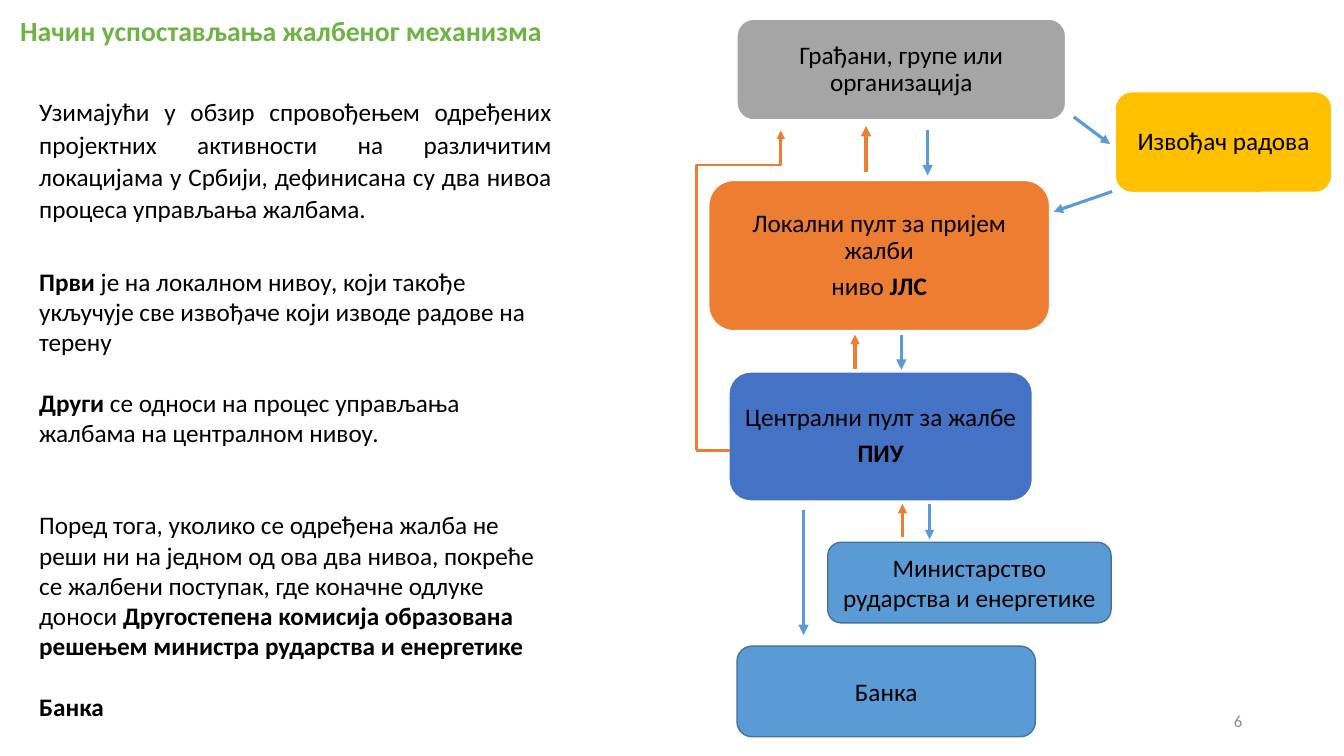
from lxml import etree
from pptx import Presentation
from pptx import util as u
from pptx.dml.color import RGBColor
from pptx.enum import shapes, text
from pptx.oxml.ns import qn

PX = 9144
FONT = "Calibri"
BLACK, WHITE = "000000", "FFFFFF"
BLUE, ORANGE, OUTLINE = "5B9BD5", "ED7D31", "43739E"
MIDDLE = text.MSO_ANCHOR.MIDDLE
CENTER, RIGHT, JUSTIFY = text.PP_ALIGN.CENTER, text.PP_ALIGN.RIGHT, text.PP_ALIGN.JUSTIFY


def px(*lengths):
    return [u.Emu(length * PX) for length in lengths]


def paint(color_format, color):
    color_format.rgb = RGBColor.from_string(color)


def set_insets(frame, left, top, right, bottom):
    frame.margin_left, frame.margin_top, frame.margin_right, frame.margin_bottom = px(
        left, top, right, bottom)


def write(paragraph, runs, size=18, color=BLACK, align=None, spacing=None, before=0, after=0):
    font = paragraph.font
    font.name, font.size = FONT, u.Pt(size)
    paint(font.color, color)
    if align is not None:
        paragraph.alignment = align
    if spacing:
        paragraph.line_spacing = spacing
    paragraph.space_before, paragraph.space_after = u.Pt(before), u.Pt(after)
    for words, bold in runs:
        run = paragraph.add_run()
        run.text = words
        if bold:
            run.font.bold = True


def next_paragraph(frame, index):
    return frame.add_paragraph() if index else frame.paragraphs[0]


def add_text(slide, place, anchor=text.MSO_ANCHOR.TOP):
    frame = slide.shapes.add_textbox(*px(*place)).text_frame
    frame.word_wrap = True
    frame.vertical_anchor = anchor
    return frame


def add_level(slide, place, fill, outline, paragraphs, inset, spacing, after):
    level = slide.shapes.add_shape(shapes.MSO_SHAPE.ROUNDED_RECTANGLE, *px(*place))
    level.shadow.inherit = False
    level.fill.solid()
    paint(level.fill.fore_color, fill)
    paint(level.line.color, outline)
    level.line.width = u.Pt(1)
    frame = level.text_frame
    frame.word_wrap = True
    frame.vertical_anchor = MIDDLE
    set_insets(frame, inset, 5, inset, 5)
    for index, runs in enumerate(paragraphs):
        write(next_paragraph(frame, index), runs, align=CENTER, spacing=spacing, after=after)


def add_link(slide, ends, color, width, arrow=True, kind=shapes.MSO_CONNECTOR.STRAIGHT):
    link = slide.shapes.add_connector(kind, *px(*ends))
    paint(link.line.color, color)
    link.line.width = u.Pt(width)
    properties = link._element.spPr
    if arrow:
        etree.SubElement(properties.find(qn("a:ln")), qn("a:tailEnd"), type="triangle")
    etree.SubElement(properties, qn("a:effectLst"))
    return link


def add_return_path(slide):
    route = add_link(slide, (891, 330, 574, 246), ORANGE, 2, kind=shapes.MSO_CONNECTOR.ELBOW)
    properties = route._element.spPr
    properties.find(qn("a:xfrm")).set("rot", "5400000")
    guides = properties.find(qn("a:prstGeom")).find(qn("a:avLst"))
    etree.SubElement(guides, qn("a:gd"), name="adj1", fmla="val 89200")


def add_title(slide):
    frame = add_text(slide, (0, 7, 1333, 72), MIDDLE)
    set_insets(frame, 20, 0, 10, 22)
    write(frame.paragraphs[0], [("Начин успостављања жалбеног механизма", True)],
          size=19.8, color="6EB344", spacing=0.9)


def add_explanation(slide):
    frame = add_text(slide, (29, 89, 528, 636))
    frame.auto_size = text.MSO_AUTO_SIZE.SHAPE_TO_FIT_TEXT
    write(frame.paragraphs[0], [(
        "Узимајући у обзир спровођењем одређених пројектних активности на различитим "
        "локацијама у Србији, дефинисана су два нивоа процеса управљања жалбама.", False)],
        align=JUSTIFY, spacing=1.07, after=8)
    steps = [
        (22, [("Први", True),
              (" је на локалном нивоу, који такође укључује све извођаче који изводе "
               "радове на терену", False)]),
        (22, [("Други", True),
              (" се односи на процес управљања жалбама на централном нивоу.", False)]),
        (44, [("Поред тога, уколико се одређена жалба не реши ни на једном од ова два нивоа, "
               "покреће се жалбени поступак, где коначне одлуке доноси ", False),
              ("Другостепена комисија образована решењем министра рударства и енергетике",
               True)]),
        (22, [("Банка", True)]),
    ]
    for before, runs in steps:
        write(frame.add_paragraph(), runs, before=before)


def add_levels(slide):
    complaint_levels = [
        ((703, 179, 338, 149), ORANGE,
         [[("Локални пулт за пријем жалби", False)], [("ниво ", False), ("ЈЛС", True)]]),
        ((731, 19, 326, 100), "A5A5A5", [[("Грађани, групе или oрганизација", False)]]),
        ((1106, 91, 215, 100), "FFC000", [[("Извођач радова", False)]]),
        ((723, 369, 301, 128), "4472C4",
         [[("Централни пулт за жалбе", False)], [("ПИУ", True)]]),
    ]
    for place, fill, paragraphs in complaint_levels:
        add_level(slide, place, fill, WHITE, paragraphs, inset=5, spacing=0.9, after=6.3)
    final_levels = [
        ((821, 538, 281, 80), "Министарство рударства и енергетике"),
        ((731, 641, 296, 90), "Банка"),
    ]
    for place, name in final_levels:
        add_level(slide, place, BLUE, OUTLINE, [[(name, False)]], inset=10, spacing=1, after=0)


def add_links(slide):
    for ends, color, width in [
        ((1065, 116, 1101, 143), BLUE, 2.25),
        ((1103, 190, 1045, 210), BLUE, 2.25),
        ((920, 129, 920, 174), BLUE, 2.5),
        ((894, 332, 894, 367), BLUE, 2.5),
        ((895, 533, 895, 500), ORANGE, 2.25),
        ((797, 506, 797, 630), BLUE, 2.5),
        ((859, 171, 859, 125), ORANGE, 2.5),
        ((922, 500, 922, 535), BLUE, 2.25),
        ((848, 366, 848, 332), ORANGE, 2.25),
    ]:
        add_link(slide, ends, color, width)
    add_return_path(slide)
    add_link(slide, (690, 447, 724, 447), ORANGE, 1.75, arrow=False)


def add_page_number(slide):
    frame = add_text(slide, (942, 695, 300, 40), MIDDLE)
    write(frame.paragraphs[0], [("6", False)], size=12, color="8C8C8C", align=RIGHT)


def main():
    deck = Presentation()
    deck.slide_width, deck.slide_height = px(1333, 750)
    slide = deck.slides.add_slide(deck.slide_layouts[6])
    add_levels(slide)
    add_links(slide)
    add_title(slide)
    add_explanation(slide)
    add_page_number(slide)
    deck.save("out.pptx")


if __name__ == "__main__":
    main()
